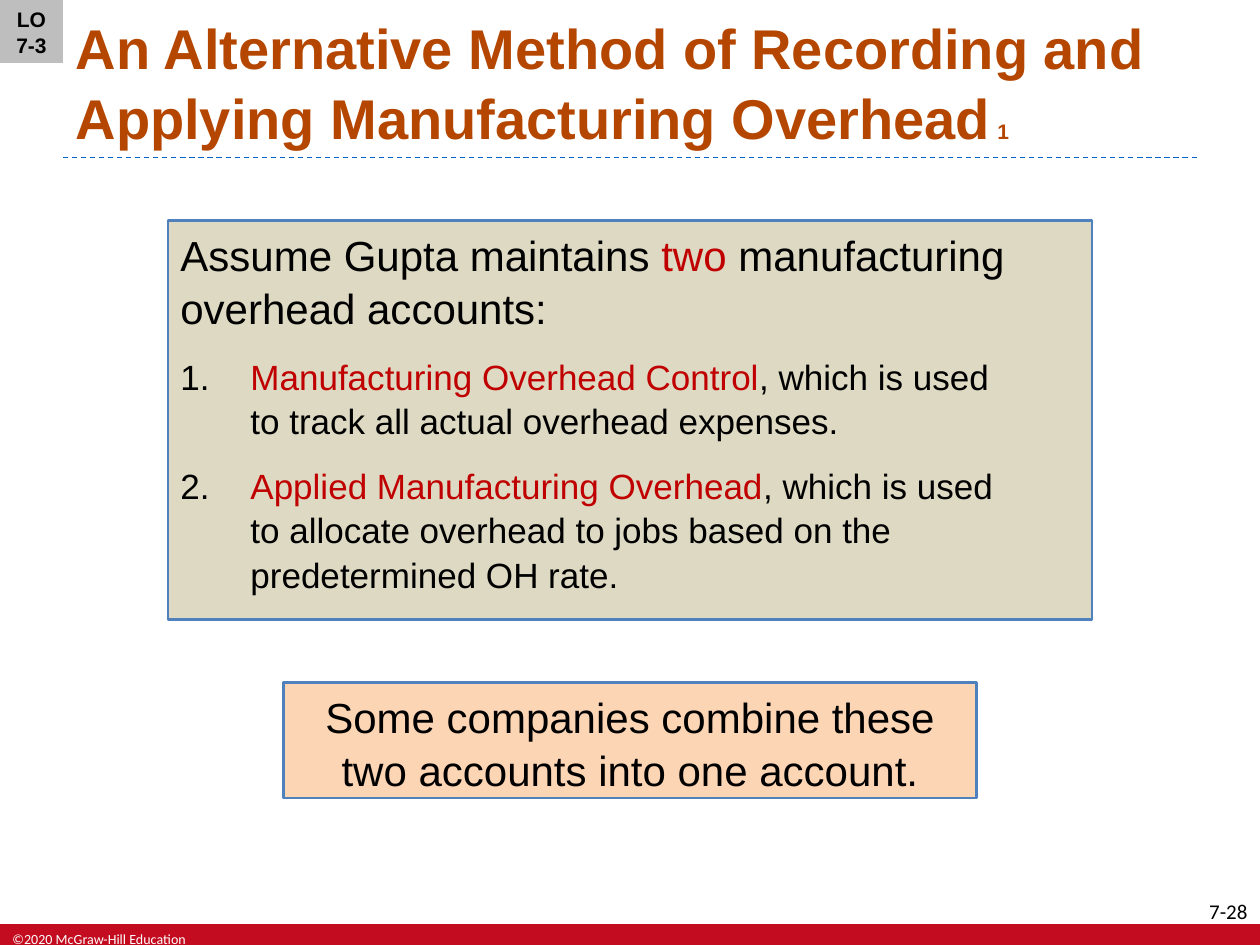
from dataclasses import dataclass

from lxml import etree
from pptx import Presentation
from pptx.dml.color import RGBColor
from pptx.enum.dml import MSO_LINE
from pptx.enum.shapes import MSO_CONNECTOR, MSO_SHAPE
from pptx.enum.text import MSO_ANCHOR, MSO_AUTO_SIZE, PP_ALIGN
from pptx.oxml.ns import qn
from pptx.util import Pt

RECTANGLE = MSO_SHAPE.RECTANGLE
STRAIGHT = MSO_CONNECTOR.STRAIGHT
DASH = MSO_LINE.DASH
LEFT, CENTER, RIGHT = PP_ALIGN.LEFT, PP_ALIGN.CENTER, PP_ALIGN.RIGHT
TOP, MIDDLE, BOTTOM = MSO_ANCHOR.TOP, MSO_ANCHOR.MIDDLE, MSO_ANCHOR.BOTTOM
NO_FIT = MSO_AUTO_SIZE.NONE


@dataclass(frozen=True)
class Theme:
    font: str = "Arial"
    footer_font: str = "Calibri"
    title: str = "B44600"
    ink: str = "000000"
    accent: str = "C00000"
    white: str = "FFFFFF"
    band: str = "C30C20"
    rule: str = "0064C8"
    border: str = "4F81BD"
    sand: str = "DDD9C3"
    peach: str = "FCD5B5"
    tag: str = "BEBEBE"
    title_size: int = 32
    lead_size: int = 24
    item_size: int = 20
    small_size: int = 12
    copyright_size: int = 8
    leading: float = 1.05
    gap: int = 6
    indent: int = 40


@dataclass(frozen=True)
class Box:
    left: float
    top: float
    width: float
    height: float

    def lengths(self):
        return [Pt(n) for n in (self.left, self.top, self.width, self.height)]


THEME = Theme()


def color(code):
    return RGBColor.from_string(code)


def add_span(para, text, size, ink=THEME.ink, bold=False, font=THEME.font):
    for index, line in enumerate(text.split("\n")):
        if index:
            para.add_line_break()
        span = para.add_run()
        span.text = line
        span.font.name = font
        span.font.size = Pt(size)
        span.font.bold = bold
        span.font.color.rgb = color(ink)


def add_panel(page, box, fill, border=None, anchor=TOP):
    panel = page.shapes.add_shape(RECTANGLE, *box.lengths())
    panel.shadow.inherit = False
    panel.fill.solid()
    panel.fill.fore_color.rgb = color(fill)
    if border:
        panel.line.color.rgb = color(border)
        panel.line.width = Pt(1.5)
    else:
        panel.line.fill.background()
    panel.text_frame.word_wrap = True
    panel.text_frame.vertical_anchor = anchor
    return panel.text_frame


def add_para(frame, align=LEFT):
    first = not frame.paragraphs[0].runs
    para = frame.paragraphs[0] if first else frame.add_paragraph()
    para.alignment = align
    para.line_spacing = THEME.leading
    para.space_before = Pt(0 if first else THEME.gap)
    para.space_after = Pt(THEME.gap)
    return para


def number_para(para):
    properties = para._p.get_or_add_pPr()
    properties.set("marL", str(Pt(THEME.indent)))
    properties.set("indent", str(-Pt(THEME.indent)))
    bullet_color = etree.SubElement(properties, qn("a:buClr"))
    etree.SubElement(bullet_color, qn("a:srgbClr"), val=THEME.ink)
    etree.SubElement(properties, qn("a:buFont"), typeface=THEME.font)
    etree.SubElement(properties, qn("a:buAutoNum"), type="arabicPeriod")


def add_label(page, box, text, size, ink, align):
    frame = page.shapes.add_textbox(*box.lengths()).text_frame
    frame.word_wrap = False
    para = frame.paragraphs[0]
    para.alignment = align
    add_span(para, text, size, ink, font=THEME.footer_font)


def add_footer(page, box):
    add_panel(page, box, THEME.band)
    add_label(page, Box(box.left, box.top, 115, box.height),
              "©2020 McGraw-Hill Education", THEME.copyright_size, THEME.white, LEFT)
    add_label(page, Box(box.left + box.width - 39, box.top - 18, 39, 14.4),
              "7-28", THEME.small_size, THEME.ink, RIGHT)


def add_title(page, box):
    title = page.shapes.title
    title.left, title.top, title.width, title.height = box.lengths()
    frame = title.text_frame
    frame.word_wrap = True
    frame.auto_size = NO_FIT
    frame.vertical_anchor = BOTTOM
    para = frame.paragraphs[0]
    para.alignment = LEFT
    para.line_spacing = THEME.leading
    add_span(para, "An Alternative Method of Recording and Applying Manufacturing Overhead",
             THEME.title_size, THEME.title, True)
    add_span(para, " 1", THEME.small_size, THEME.title, True)

    base = box.top + box.height
    rule = page.shapes.add_connector(
        STRAIGHT, Pt(box.left), Pt(base), Pt(box.left + box.width), Pt(base))
    rule.line.color.rgb = color(THEME.rule)
    rule.line.width = Pt(0.75)
    rule.line.dash_style = DASH
    etree.SubElement(rule._element.spPr, qn("a:effectLst"))


def add_accounts(page, box):
    frame = add_panel(page, box, THEME.sand, THEME.border)
    lead = add_para(frame)
    add_span(lead, "Assume Gupta maintains ", THEME.lead_size)
    add_span(lead, "two", THEME.lead_size, THEME.accent)
    add_span(lead, " manufacturing overhead accounts:", THEME.lead_size)
    accounts = [
        ("Manufacturing Overhead Control",
         ", which is used\nto track all actual overhead expenses."),
        ("Applied Manufacturing Overhead",
         ", which is used\nto allocate overhead to jobs based on the\npredetermined OH rate."),
    ]
    for name, purpose in accounts:
        para = add_para(frame)
        number_para(para)
        add_span(para, name, THEME.item_size, THEME.accent)
        add_span(para, purpose, THEME.item_size)


def add_remark(page, box):
    frame = add_panel(page, box, THEME.peach, THEME.border)
    add_span(add_para(frame, CENTER),
             "Some companies combine these two accounts into one account.", THEME.lead_size)


def add_objective(page, box):
    frame = add_panel(page, box, THEME.tag, anchor=MIDDLE)
    para = add_para(frame, CENTER)
    para.space_after = Pt(0)
    add_span(para, "LO 7-3", THEME.small_size, bold=True)


def main():
    deck = Presentation()
    deck.slide_width, deck.slide_height = Pt(720), Pt(540)
    page = deck.slides.add_slide(deck.slide_layouts.get_by_name("Title Only"))
    add_footer(page, Box(0, 528, 720, 12))
    add_title(page, Box(36, 3.6, 648, 86.4))
    add_accounts(page, Box(96, 126, 528, 228))
    add_remark(page, Box(162, 390, 396, 66))
    add_objective(page, Box(0, 0, 36, 36))
    deck.save("out.pptx")


if __name__ == "__main__":
    main()
